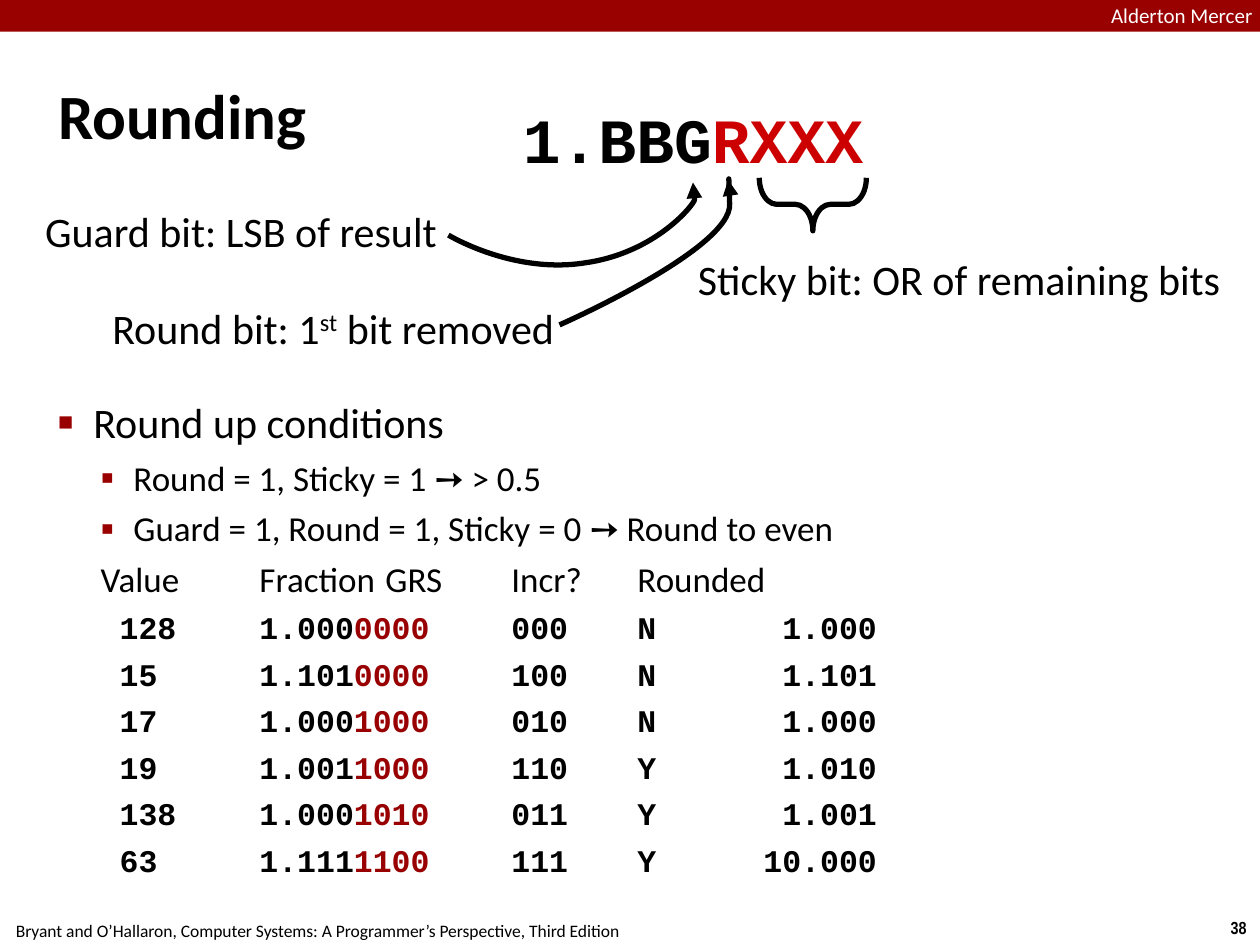
from lxml import etree
from pptx import Presentation
from pptx.dml.color import RGBColor
from pptx.enum.shapes import MSO_SHAPE
from pptx.enum.text import MSO_ANCHOR, MSO_AUTO_SIZE, PP_ALIGN
from pptx.oxml.ns import qn
from pptx.util import Cm, Pt

LEFT, CENTER, RIGHT = PP_ALIGN.LEFT, PP_ALIGN.CENTER, PP_ALIGN.RIGHT
MIDDLE, TOP = MSO_ANCHOR.MIDDLE, MSO_ANCHOR.TOP
GROW, FIXED = MSO_AUTO_SIZE.SHAPE_TO_FIT_TEXT, MSO_AUTO_SIZE.NONE
RECT, BRACE = MSO_SHAPE.RECTANGLE, MSO_SHAPE.RIGHT_BRACE

SANS, MONO, NARROW = "Calibri", "Courier New", "Arial Narrow"
BLACK, WHITE, MAROON, DIGIT_RED, RED = "000000", "FFFFFF", "990000", "980002", "CC0000"

LABEL = {"name": SANS, "size": Pt(24)}
DETAIL = {"name": SANS, "size": Pt(20)}
CODE = {"name": MONO, "size": Pt(18), "bold": True}

# value, kept bits, removed bits, GRS, increment, rounded
ROWS = [
    (" 128", "1.000", "0000", "000", "N", " 1.000"),
    (" 15", "1.101", "0000", "100", "N", " 1.101"),
    (" 17", "1.000", "1000", "010", "N", " 1.000"),
    (" 19", "1.001", "1000", "110", "Y", " 1.010"),
    (" 138", "1.000", "1010", "011", "Y", " 1.001"),
    (" 63", "1.111", "1100", "111", "Y", "10.000"),
]


def rgb(color):
    return RGBColor.from_string(color)


def add_run(p, text, style, color=BLACK):
    r = p.add_run()
    r.text = text
    for key, value in style.items():
        setattr(r.font, key, value)
    r.font.color.rgb = rgb(color)
    return r


def set_frame(tf, inset=0.1, **values):
    for side in ("left", "top", "right", "bottom"):
        setattr(tf, f"margin_{side}", Cm(inset))
    for key, value in values.items():
        setattr(tf, key, value)


def place(sp, left, top, width, height):
    sp.left, sp.top, sp.width, sp.height = Cm(left), Cm(top), Cm(width), Cm(height)


def add_label(slide, box, runs, align=LEFT, inset=0.1, wrap=False, size=GROW):
    sp = slide.shapes.add_textbox(*map(Cm, box))
    set_frame(sp.text_frame, inset, word_wrap=wrap, auto_size=size)
    p = sp.text_frame.paragraphs[0]
    p.alignment = align
    return [add_run(p, *run) for run in runs]


def style_line(sp):
    sp.shadow.inherit = False
    sp.fill.background()
    sp.line.color.rgb = rgb(BLACK)
    sp.line.width = Pt(3)


def add_curved_arrow(slide, left, top, start, segments):
    """Each segment holds two control points and an end point."""
    def emu(point):
        return Cm(left + point[0]), Cm(top + point[1])

    builder = slide.shapes.build_freeform(*emu(start))
    builder.add_line_segments([emu(seg[-1]) for seg in segments], close=False)
    sp = builder.convert_to_shape()
    style_line(sp)
    # Turn the straight segments into Bézier curves
    for line, seg in zip(list(sp._element.iter(qn("a:lnTo"))), segments):
        line.tag = qn("a:cubicBezTo")
        line.clear()
        for x, y in map(emu, seg):
            etree.SubElement(line, qn("a:pt"), x=str(x - sp.left), y=str(y - sp.top))
    etree.SubElement(sp.line._get_or_add_ln(), qn("a:tailEnd"), type="triangle")


def build_header(slide, left, top, width, height):
    bar = slide.shapes.add_shape(RECT, Cm(left), Cm(top), Cm(width), Cm(height))
    bar.shadow.inherit = False
    bar.fill.solid()
    bar.fill.fore_color.rgb = rgb(MAROON)
    bar.line.fill.background()
    add_label(slide, (left + 22.4, top + 0.05, 3.66, 0.48),
              [("Alderton Mercer", {"name": SANS, "size": Pt(12)}, WHITE)],
              inset=0, wrap=True, size=FIXED)


def build_title(slide, *box):
    title = slide.shapes.title
    place(title, *box)
    set_frame(title.text_frame, vertical_anchor=MIDDLE, auto_size=FIXED)
    p = title.text_frame.paragraphs[0]
    p.alignment = LEFT
    p._p.get_or_add_pPr().set("marL", str(Cm(0.33)))
    p._p.get_or_add_pPr().set("indent", str(Cm(-0.33)))
    add_run(p, "Rounding", {"name": SANS, "size": Pt(36), "bold": True})


def build_bit_diagram(slide, left, top):
    # Bit pattern and its three labels
    big = {"name": MONO, "size": Pt(36), "bold": True}
    add_label(slide, (left + 10, top, 7.14, 1.75),
              [("1.BBG", big), ("RXXX", big, RED)], CENTER)
    add_label(slide, (left, top + 2.13, 8.51, 1.24),
              [("Guard bit: LSB of result", LABEL)], RIGHT, wrap=True, size=FIXED)
    runs = add_label(slide, (left + 1.45, top + 4.07, 9.42, 1.24),
                     [("Round bit: 1", LABEL), ("st", LABEL), (" bit removed", LABEL)], RIGHT)
    runs[1].font._element.set("baseline", "30000")
    add_label(slide, (left + 13.57, top + 3.1, 11.07, 1.24),
              [("Sticky bit: OR of remaining bits", LABEL)])

    # Brace under the remaining bits
    brace = slide.shapes.add_shape(BRACE, Cm(left + 15.45), Cm(top + 1.12), Cm(1.07), Cm(2.16))
    brace.rotation = 90
    brace.adjustments[0] = 0.33
    style_line(brace)

    # Arrows from the labels to their bits
    add_curved_arrow(slide, left, top, (10.88, 4.63), [
        ((10.88, 4.63), (14.36, 3.1), (14.31, 2.19)),
        ((14.28, 1.28), (14.28, 1.71), (14.28, 1.71))])
    add_curved_arrow(slide, left, top, (8.64, 2.82), [
        ((8.64, 2.82), (9.94, 3.61), (11.39, 3.38)),
        ((12.83, 3.18), (13.6, 2.19), (13.6, 2.11)),
        ((13.6, 2.06), (13.57, 1.76), (13.57, 1.76))])


def add_item(tf, runs, level=1, bullet=None, bullet_size=100):
    p = tf.paragraphs[0] if level == 0 else tf.add_paragraph()
    p.level = level
    p.alignment = LEFT
    p.space_before = Pt(5 if level else 6)
    margin, hanging = (1.52, 0.66) if level else (0.71, 0.71)
    pPr = p._p.get_or_add_pPr()
    for key, value in {"marL": Cm(margin), "indent": Cm(-hanging), "defTabSz": Cm(2.54)}.items():
        pPr.set(key, str(value))
    if bullet:
        color = etree.SubElement(pPr, qn("a:buClr"))
        etree.SubElement(color, qn("a:srgbClr"), val=MAROON)
        etree.SubElement(pPr, qn("a:buSzPct"), val=str(bullet_size * 1000))
        etree.SubElement(pPr, qn("a:buChar"), char=bullet)
    else:
        etree.SubElement(pPr, qn("a:buNone"))
    for run in runs:
        add_run(p, *run)


def build_conditions(slide, *box):
    body = slide.placeholders[1]
    place(body, *box)
    tf = body.text_frame
    set_frame(tf, vertical_anchor=TOP, auto_size=FIXED, word_wrap=True)
    add_item(tf, [("Round up conditions", LABEL)], 0, "■", 60)
    for text in ("Round = 1, Sticky = 1 ➙ > 0.5",
                 "Guard = 1, Round = 1, Sticky = 0 ➙ Round to even"):
        add_item(tf, [(text, DETAIL)], 1, "▪", 110)

    # Tabbed examples
    add_item(tf, [("Value\tFraction\tGRS\tIncr?\tRounded", DETAIL)])
    for value, kept, removed, *results in ROWS:
        add_item(tf, [(f"{value}\t{kept}", CODE), (f"{removed}\t", CODE, DIGIT_RED),
                      ("\t".join(results), CODE)])


def build_footer(slide, left, top):
    add_label(slide, (left + 24.59, top, 0.86, 0.69),
              [("38", {"name": NARROW, "size": Pt(10), "bold": True})], CENTER, 0.13)
    add_label(slide, (left, top + 0.05, 12.9, 0.69),
              [("Bryant and O’Hallaron, Computer Systems: A Programmer’s Perspective, "
                "Third Edition", {"name": SANS, "size": Pt(10)})], CENTER, 0.13)


def main():
    prs = Presentation()
    prs.slide_width, prs.slide_height = Cm(25.4), Cm(19.05)
    slide = prs.slides.add_slide(prs.slide_layouts[1])
    build_header(slide, 0, 0, 25.4, 0.64)
    build_title(slide, 1.07, 0.71, 23.29, 3.18)
    build_conditions(slide, 1.07, 7.9, 23.29, 11.07)
    build_bit_diagram(slide, 0.4, 1.92)
    build_footer(slide, -0.05, 18.36)
    prs.save("out.pptx")


if __name__ == "__main__":
    main()
